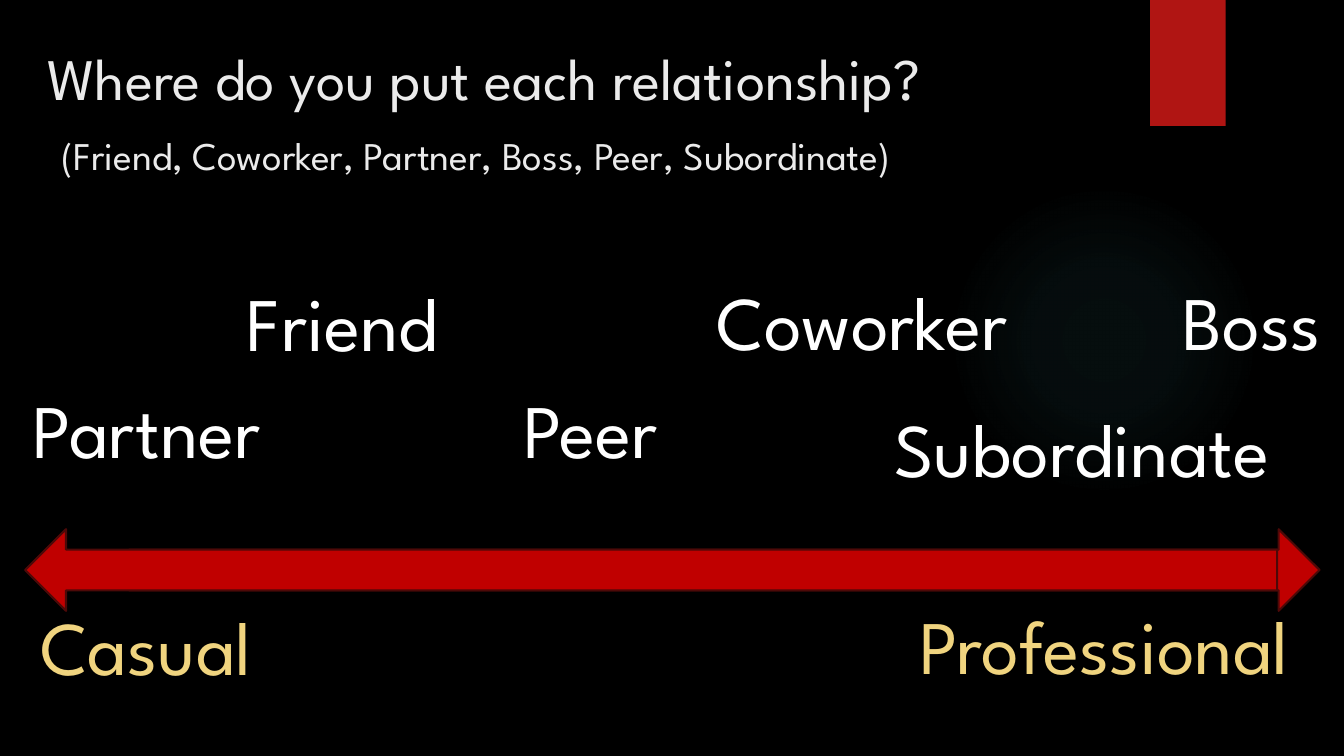
import pptx
import pptx.util
import pptx.dml.color
import pptx.enum.shapes
import pptx.enum.text
import pptx.oxml
import pptx.oxml.ns

Pt = pptx.util.Pt
SHAPES = pptx.enum.shapes.MSO_SHAPE
ALIGN = pptx.enum.text.PP_ALIGN

presentation = pptx.Presentation()
presentation.slide_width = Pt(960)
presentation.slide_height = Pt(540)
slide = presentation.slides.add_slide(presentation.slide_layouts[6])


def color(value):
    return pptx.dml.color.RGBColor.from_string(value)


def add_text(text, left, top, width, height, size=54, fill="FFFFFF",
             align=ALIGN.CENTER, wrap=False):
    box = slide.shapes.add_textbox(Pt(left), Pt(top), Pt(width), Pt(height))
    box.text_frame.word_wrap = wrap
    paragraph = box.text_frame.paragraphs[0]
    paragraph.alignment = align
    paragraph.text = text
    for run in paragraph.runs:
        run.font.name = "League Spartan"
        run.font.size = Pt(size)
        run.font.color.rgb = color(fill)
    return paragraph


# Background
slide.background.fill.solid()
slide.background.fill.fore_color.rgb = color("000000")

# Soft teal glow
glow = slide.shapes.add_shape(SHAPES.OVAL, Pt(677.5), Pt(131.8), Pt(221.8), Pt(221.8))
glow.shadow.inherit = False
stops = "".join(
    f'<a:gs pos="{position}000"><a:srgbClr val="50B9C1">'
    f'<a:alpha val="{opacity}000"/></a:srgbClr></a:gs>'
    for position, opacity in [(0, 7), (36, 6), (69, 0)])
gradient = pptx.oxml.parse_xml(
    f'<a:gradFill {pptx.oxml.ns.nsdecls("a")}><a:gsLst>{stops}</a:gsLst>'
    '<a:path path="circle"><a:fillToRect l="50000" t="50000" r="50000" b="50000"/>'
    '</a:path></a:gradFill>')
glow._element.spPr.insert(2, gradient)
glow.line.fill.background()

# Red tab at the top
tab = slide.shapes.add_shape(SHAPES.RECTANGLE, Pt(821.5), Pt(0), Pt(54), Pt(90))
tab.shadow.inherit = False
tab.fill.solid()
tab.fill.fore_color.rgb = color("B01513")
tab.line.fill.background()

# Scale: two overlapping arrows, the left one turned around
for left, width, rotation in [(92.2, 850.3, 0), (18, 894.2, 180)]:
    arrow = slide.shapes.add_shape(SHAPES.RIGHT_ARROW, Pt(left), Pt(378), Pt(width), Pt(58.3))
    arrow.rotation = rotation
    arrow.shadow.inherit = False
    arrow.fill.solid()
    arrow.fill.fore_color.rgb = color("C00000")
    arrow.line.color.rgb = color("4D0908")
    arrow.line.width = Pt(1.5)

# Title with the list of relationships below it
title = add_text("Where do you put each relationship?\v ", 26.6, 25.9, 790.6, 58.3,
                 size=42, fill="EBEBEB", align=ALIGN.LEFT, wrap=True)
choices = title.add_run()
choices.text = "(Friend, Coworker, Partner, Boss, Peer, Subordinate)"
choices.font.name = "League Spartan"
choices.font.size = Pt(28)
choices.font.color.rgb = color("EBEBEB")

# Relationships and the ends of the scale
WHITE, GOLD = "FFFFFF", "F0D47F"
for label, left, top, width, fill in [
    ("Friend", 157.7, 193.7, 173.5, WHITE),
    ("Coworker", 493.9, 193, 243.4, WHITE),
    ("Boss", 833.8, 193, 121, WHITE),
    ("Partner", 12.2, 270, 185, WHITE),
    ("Peer", 364.3, 270, 115.2, WHITE),
    ("Subordinate", 625.7, 283.7, 294.5, WHITE),
    ("Casual", 5, 424.8, 198.7, GOLD),
    ("Professional", 627.8, 424.1, 321.8, GOLD),
]:
    add_text(label, left, top, width, 72.7, fill=fill)

presentation.save("out.pptx")
